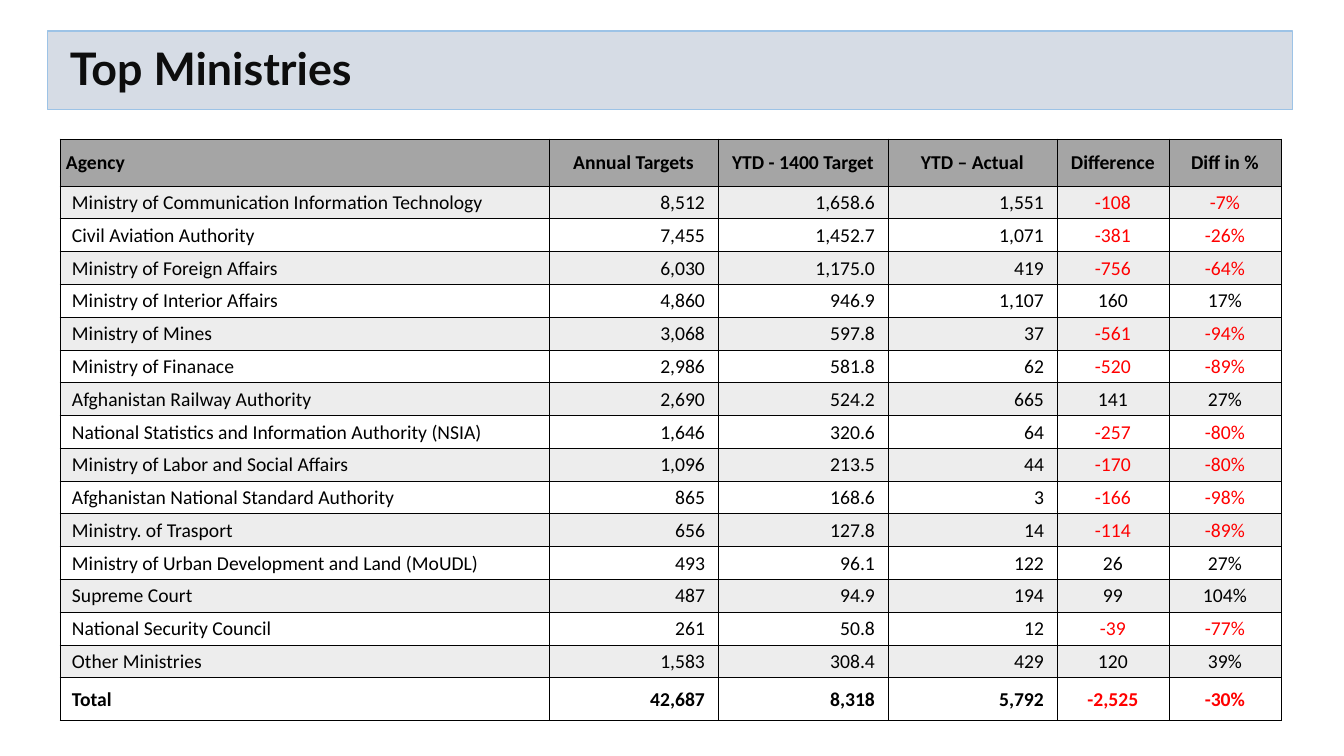
from lxml.etree import SubElement
from pptx import Presentation
from pptx.dml.color import RGBColor
from pptx.enum.shapes import MSO_SHAPE
from pptx.enum.text import MSO_ANCHOR, PP_ALIGN
from pptx.oxml.ns import qn
from pptx.util import Emu, Pt

TITLE = "Top Ministries"
HEAD = ("Agency", "Annual Targets", "YTD - 1400 Target", "YTD – Actual", "Difference", "Diff in %")
BODY = [
    ("Ministry of Communication Information Technology", "8,512", "1,658.6", "1,551", "-108", "-7%"),
    ("Civil Aviation Authority", "7,455", "1,452.7", "1,071", "-381", "-26%"),
    ("Ministry of Foreign Affairs", "6,030", "1,175.0", "419", "-756", "-64%"),
    ("Ministry of Interior Affairs", "4,860", "946.9", "1,107", "160", "17%"),
    ("Ministry of Mines", "3,068", "597.8", "37", "-561", "-94%"),
    ("Ministry of Finanace", "2,986", "581.8", "62", "-520", "-89%"),
    ("Afghanistan Railway Authority", "2,690", "524.2", "665", "141", "27%"),
    ("National Statistics and Information Authority (NSIA)", "1,646", "320.6", "64", "-257", "-80%"),
    ("Ministry of Labor and Social Affairs", "1,096", "213.5", "44", "-170", "-80%"),
    ("Afghanistan National Standard Authority", "865", "168.6", "3", "-166", "-98%"),
    ("Ministry. of Trasport", "656", "127.8", "14", "-114", "-89%"),
    ("Ministry of Urban Development and Land (MoUDL)", "493", "96.1", "122", "26", "27%"),
    ("Supreme Court", "487", "94.9", "194", "99", "104%"),
    ("National Security Council", "261", "50.8", "12", "-39", "-77%"),
    ("Other Ministries", "1,583", "308.4", "429", "120", "39%"),
]
TOTAL = ("Total", "42,687", "8,318", "5,792", "-2,525", "-30%")
ROWS = [HEAD, *BODY, TOTAL]
LAST = len(ROWS) - 1

BLACK = RGBColor(0x00, 0x00, 0x00)
RED = RGBColor(0xFF, 0x00, 0x00)
INK = RGBColor(0x0D, 0x0D, 0x0D)
GRAY = RGBColor(0xA5, 0xA5, 0xA5)
BAND = RGBColor(0xED, 0xED, 0xED)
PALE = RGBColor(0xD6, 0xDC, 0xE5)
BLUE = RGBColor(0x9D, 0xC3, 0xE6)

WIDTHS = (489, 169, 170, 169, 112, 112)
HEAD_H, BODY_H, TOTAL_H = 47, 492, 43
HEIGHTS = [HEAD_H] + [BODY_H / len(BODY)] * len(BODY) + [TOTAL_H]


def px(n):
    return Emu(round(n * 914400 / 100.8))


def write(frame, text, font, size, color, bold):
    para = frame.paragraphs[0]
    run = para.add_run()
    run.text = text
    run.font.name = font
    run.font.size = Pt(size)
    run.font.bold = bold
    run.font.color.rgb = color
    return para


def frame_cell(cell):
    """Draw a thin black line on all four sides."""
    props = cell._tc.get_or_add_tcPr()
    for side in ("lnL", "lnR", "lnT", "lnB"):
        line = SubElement(props, qn(f"a:{side}"), w=str(Pt(0.5)))
        fill = SubElement(line, qn("a:solidFill"))
        SubElement(fill, qn("a:srgbClr"), val=str(BLACK))


def fill_cell(cell, row, col, text):
    head = row == 0
    frame_cell(cell)
    if head or (row % 2 and row < LAST):
        cell.fill.solid()
        cell.fill.fore_color.rgb = GRAY if head else BAND
    else:
        cell.fill.background()

    number = not head and 1 <= col <= 3
    cell.vertical_anchor = MSO_ANCHOR.MIDDLE
    cell.margin_left = px(1 if col else 6 if head else 12)
    cell.margin_right = px(13 if number else 1)
    cell.margin_top, cell.margin_bottom = px(1), 0
    color = RED if text.startswith("-") else BLACK
    para = write(cell.text_frame, text, "Calibri", 14, color, row in (0, LAST))
    if number:
        para.alignment = PP_ALIGN.RIGHT
    else:
        para.alignment = PP_ALIGN.CENTER if col else PP_ALIGN.LEFT


def add_title(slide):
    bar = slide.shapes.add_shape(MSO_SHAPE.RECTANGLE, px(48), px(31), px(1245), px(79))
    bar.shadow.inherit = False
    bar.fill.solid()
    bar.fill.fore_color.rgb = PALE
    bar.line.color.rgb = BLUE
    bar.line.width = Pt(0.75)
    frame = bar.text_frame
    frame.word_wrap = True
    frame.vertical_anchor = MSO_ANCHOR.MIDDLE
    frame.margin_left = px(22)
    para = write(frame, TITLE, "Lato", 32, INK, True)
    para.alignment = PP_ALIGN.LEFT
    para.line_spacing = 0.9


def add_grid(slide):
    table = slide.shapes.add_table(
        len(ROWS), len(HEAD), px(60), px(139), px(sum(WIDTHS)), px(sum(HEIGHTS))
    ).table
    table.first_row = table.horz_banding = False
    for col, width in enumerate(WIDTHS):
        table.columns[col].width = px(width)
    for row, texts in enumerate(ROWS):
        table.rows[row].height = px(HEIGHTS[row])
        for col, text in enumerate(texts):
            fill_cell(table.cell(row, col), row, col, text)


def main():
    deck = Presentation()
    deck.slide_width, deck.slide_height = px(1344), px(756)
    slide = deck.slides.add_slide(deck.slide_layouts[6])
    add_title(slide)
    add_grid(slide)
    deck.save("out.pptx")


if __name__ == "__main__":
    main()
